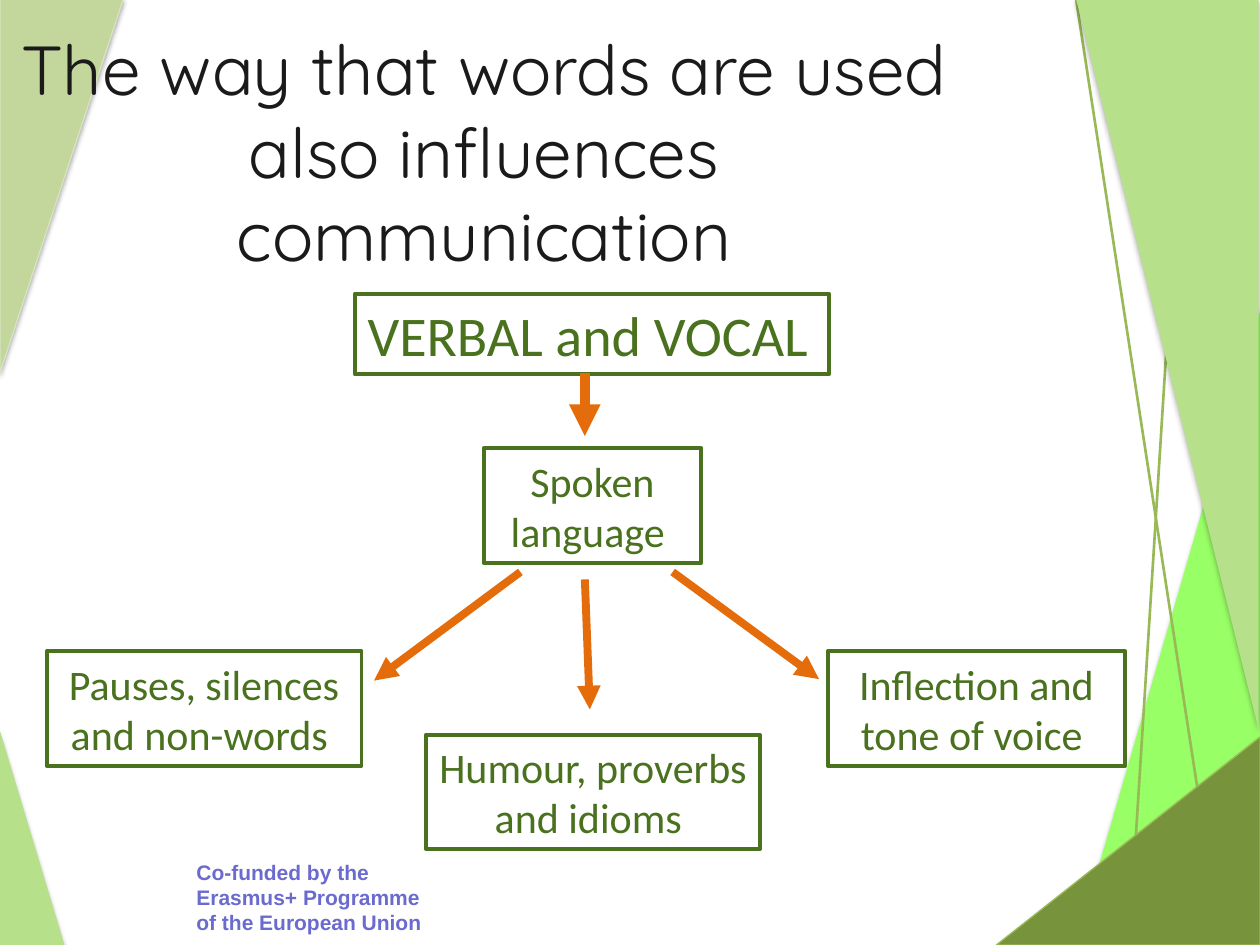
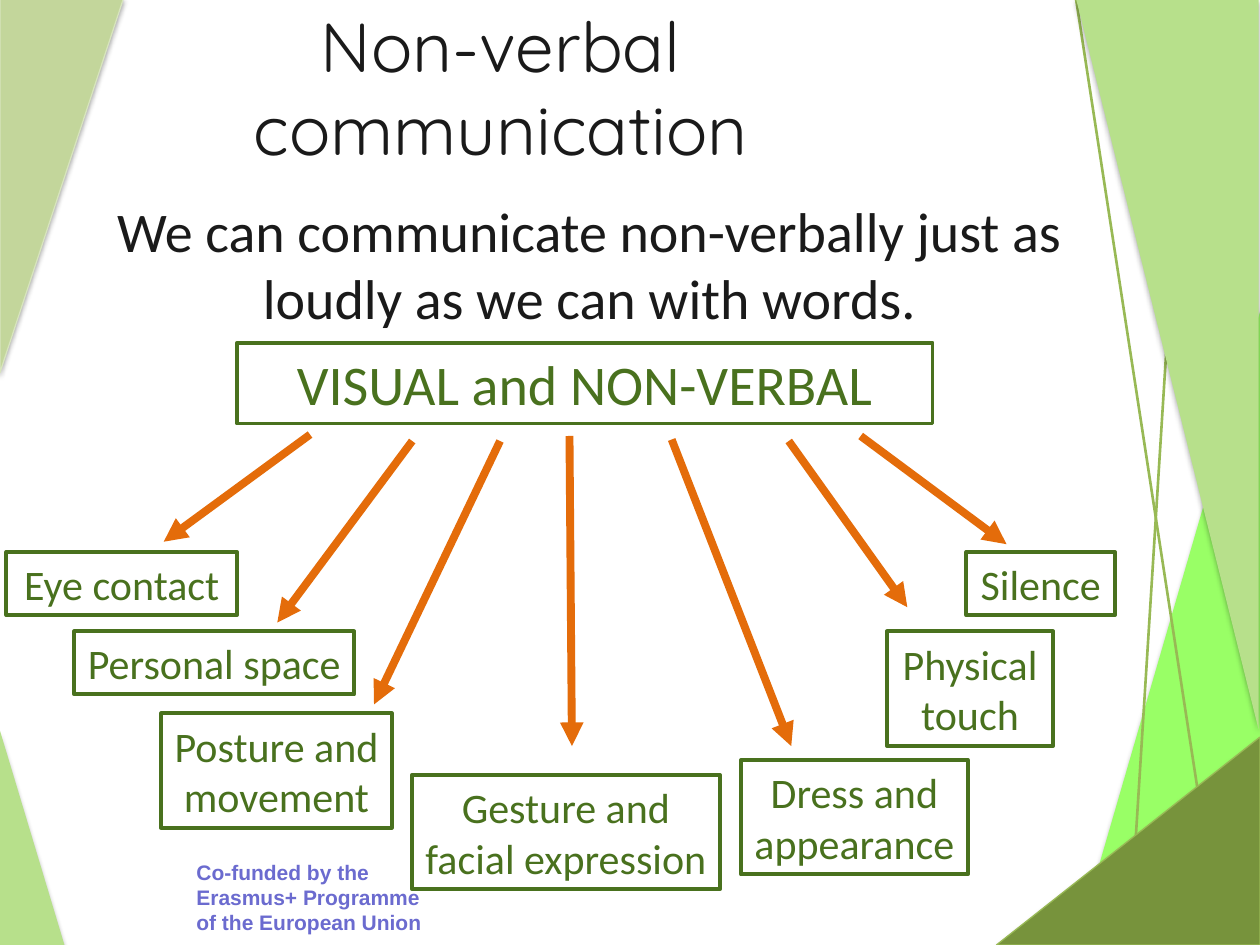
"""Build two slides on verbal and non-verbal communication."""
from dataclasses import dataclass
from typing import Optional

from pptx import Presentation
from pptx.dml.color import RGBColor
from pptx.enum.shapes import MSO_CONNECTOR as Connector, MSO_SHAPE as Preset
from pptx.enum.text import MSO_ANCHOR as Anchor, PP_ALIGN as Align
from pptx.oxml.ns import qn
from pptx.oxml.xmlchemy import OxmlElement
from pptx.util import Cm, Pt

INK = "1A1A1A"
BOX_GREEN = "49711E"
ARROW_ORANGE = "E46C0A"
LEAF = "B7E08B"
STEM = "98B955"
FOOTER_BLUE = "6B6BCF"

ONE_LINE, TWO_LINES, HEADING = 1.27, 2.31, 1.63


@dataclass(frozen=True)
class TextStyle:
    """Font, size, colour and placement of a text."""
    font: str
    size: float
    color: str
    align: Align = Align.CENTER
    anchor: Anchor = Anchor.MIDDLE
    bold: bool = False


@dataclass(frozen=True)
class Area:
    """A rectangle in centimetres."""
    left: float
    top: float
    width: float
    height: float

    def lengths(self) -> list:
        """Return the four lengths for python-pptx."""
        return [Cm(value) for value in (self.left, self.top, self.width, self.height)]


@dataclass(frozen=True)
class Triangle:
    """A right triangle of the background."""
    area: Area
    fill: str
    rotation: int = 0
    flip: bool = False
    line: Optional[str] = None
    shadow_opacity: int = 35


@dataclass(frozen=True)
class Line:
    """A straight line between two points in centimetres."""
    start: tuple[float, float]
    end: tuple[float, float]
    color: str = ARROW_ORANGE
    width: float = 4.5
    arrow: bool = True


@dataclass(frozen=True)
class Box:
    """An outlined box with its text."""
    text: str
    left: float
    top: float
    width: float
    height: float = TWO_LINES
    align: Align = Align.CENTER


@dataclass(frozen=True)
class Diagram:
    """The title, boxes and arrows of one slide."""
    title: str
    title_area: Area
    boxes: list[Box]
    arrows: list[Line]


TITLE = TextStyle("Quicksand", 39.6, INK)
BODY = TextStyle("Calibri", 32, INK, anchor=Anchor.TOP)
FOOTER = TextStyle("Arial", 12, FOOTER_BLUE, Align.LEFT, Anchor.TOP, True)

BACK_TRIANGLE = Triangle(Area(21.69, 6.12, 3.76, 12.93), "99FF66", flip=True, shadow_opacity=38)
LEFT_TRIANGLES = [
    Triangle(Area(0, 14.73, 1.3, 4.32), LEAF),
    Triangle(Area(0, -0.03, 2.49, 7.54), "C3D69B", 180, True, "D7E4BD"),
]
STEMS = [
    Line((22.76, 19.05), (23.62, 5.33), STEM, 1.5, False),
    Line((24.51, 18.31), (21.69, -0.03), STEM, 1.5, False),
]
RIGHT_TRIANGLES = [
    Triangle(Area(21.69, -0.03, 3.68, 14.73), LEAF, 180),
    Triangle(Area(20.09, 14.86, 5.31, 4.19), "77933C", flip=True, line=STEM),
]

VERBAL = Diagram(
    "The way that words are used also influences communication",
    Area(0, 0.76, 19.51, 4.57),
    [
        Box("VERBAL and VOCAL", 7.16, 5.92, 9.55, HEADING, Align.LEFT),
        Box("Spoken language ", 9.75, 9.04, 4.39),
        Box("Pauses, silences and non-words ", 0.94, 13.13, 6.35),
        Box("Humour, proverbs and idioms ", 8.59, 14.81, 6.73),
        Box("Inflection and tone of voice ", 16.69, 13.13, 5.99),
    ],
    [
        Line((10.49, 11.53), (7.54, 13.72)),
        Line((11.79, 11.68), (11.89, 14.3)),
        Line((13.56, 11.53), (16.51, 13.69)),
        Line((11.79, 7.52), (11.79, 8.79), width=6),
    ],
)
NON_VERBAL = Diagram(
    "Non-verbal communication",
    Area(1.88, 0.15, 16.43, 3.18),
    [
        Box("VISUAL and NON-VERBAL", 4.78, 6.91, 14.02, HEADING),
        Box("Eye contact", 0.13, 11.13, 4.65, ONE_LINE),
        Box("Personal space", 1.5, 12.73, 5.64, ONE_LINE),
        Box("Posture and movement", 3.25, 14.38, 4.65),
        Box("Gesture and facial expression", 8.31, 15.62, 6.2),
        Box("Dress and appearance", 14.94, 15.32, 4.57),
        Box("Physical touch", 17.88, 12.73, 3.35),
        Box("Silence", 19.48, 11.13, 3, ONE_LINE),
    ],
    [
        Line((6.25, 8.76), (3.3, 10.92)),
        Line((8.31, 8.89), (5.59, 12.55)),
        Line((10.08, 8.89), (7.54, 14.2)),
        Line((11.48, 8.79), (11.53, 15.04)),
        Line((13.54, 8.86), (15.95, 15.04)),
        Line((15.9, 8.89), (18.29, 12.24)),
        Line((17.35, 8.79), (20.29, 10.97)),
    ],
)


def rgb(color: str) -> RGBColor:
    """Turn a hex string into a colour."""
    return RGBColor.from_string(color)


def child(parent, tag: str, **attributes: str):
    """Append an XML element with attributes and return it."""
    element = OxmlElement(tag)
    for name, value in attributes.items():
        element.set(name, value)
    parent.append(element)
    return element


def write(shape, text: str, style: TextStyle) -> None:
    """Put styled, wrapping text in a shape."""
    frame = shape.text_frame
    frame.word_wrap = True
    frame.vertical_anchor = style.anchor
    frame.text = text
    paragraph = frame.paragraphs[0]
    paragraph.alignment = style.align
    font = paragraph.runs[0].font
    font.name, font.size, font.bold = style.font, Pt(style.size), style.bold
    font.color.rgb = rgb(style.color)


def add_text(slide, area: Area, text: str, style: TextStyle) -> None:
    """Add a text box."""
    write(slide.shapes.add_textbox(*area.lengths()), text, style)


def add_triangle(slide, triangle: Triangle) -> None:
    """Add a right triangle with a soft shadow."""
    shape = slide.shapes.add_shape(Preset.RIGHT_TRIANGLE, *triangle.area.lengths())
    shape.rotation = triangle.rotation
    properties = shape.element.spPr
    if triangle.flip:
        properties.find(qn("a:xfrm")).set("flipH", "1")
    shape.fill.solid()
    shape.fill.fore_color.rgb = rgb(triangle.fill)
    if triangle.line:
        shape.line.color.rgb = rgb(triangle.line)
        shape.line.width = Pt(0.75)
    else:
        shape.line.fill.background()
    shape.shadow.inherit = False
    shadow = child(properties.find(qn("a:effectLst")), "a:outerShdw", blurRad=str(Pt(3.1)),
                   dist=str(Pt(1.8)), dir="5400000", rotWithShape="0")
    black = child(shadow, "a:srgbClr", val="000000")
    child(black, "a:alpha", val=str(triangle.shadow_opacity * 1000))


def add_line(slide, line: Line) -> None:
    """Add a straight line or arrow."""
    points = [Cm(value) for value in (*line.start, *line.end)]
    connector = slide.shapes.add_connector(Connector.STRAIGHT, *points)
    connector.line.color.rgb = rgb(line.color)
    connector.line.width = Pt(line.width)
    properties = connector.element.spPr
    if line.arrow:
        child(properties.find(qn("a:ln")), "a:tailEnd", type="triangle")
    child(properties, "a:effectLst")


def add_box(slide, box: Box) -> None:
    """Add an outlined box; the heading box has larger text."""
    area = Area(box.left, box.top, box.width, box.height)
    shape = slide.shapes.add_shape(Preset.RECTANGLE, *area.lengths())
    shape.shadow.inherit = False
    shape.fill.background()
    shape.line.color.rgb = rgb(BOX_GREEN)
    shape.line.width = Pt(2.25)
    size = 32 if box.height == HEADING else 24
    write(shape, box.text, TextStyle("Calibri", size, BOX_GREEN, box.align))


def add_background(slide) -> None:
    """Add the shared triangles, stems and footer."""
    add_triangle(slide, BACK_TRIANGLE)
    add_text(slide, Area(3.71, 17.2, 5.08, 1.8),
             "Co-funded by the Erasmus+ Programme of the European Union", FOOTER)
    for triangle in LEFT_TRIANGLES:
        add_triangle(slide, triangle)
    for stem in STEMS:
        add_line(slide, stem)
    for triangle in RIGHT_TRIANGLES:
        add_triangle(slide, triangle)


def add_diagram(presentation, diagram: Diagram):
    """Add a slide with its title, boxes and arrows."""
    slide = presentation.slides.add_slide(presentation.slide_layouts[6])
    add_background(slide)
    add_text(slide, diagram.title_area, diagram.title, TITLE)
    for box in diagram.boxes:
        add_box(slide, box)
    for arrow in diagram.arrows:
        add_line(slide, arrow)
    return slide


def main() -> None:
    """Build and save the presentation."""
    presentation = Presentation()
    presentation.slide_width, presentation.slide_height = Cm(25.4), Cm(19.05)
    add_diagram(presentation, VERBAL)
    slide = add_diagram(presentation, NON_VERBAL)
    add_text(slide, Area(1.27, 3.84, 21.23, 3.07),
             "We can communicate non-verbally just as loudly as we can with words.", BODY)
    presentation.save("out.pptx")


if __name__ == "__main__":
    main()
